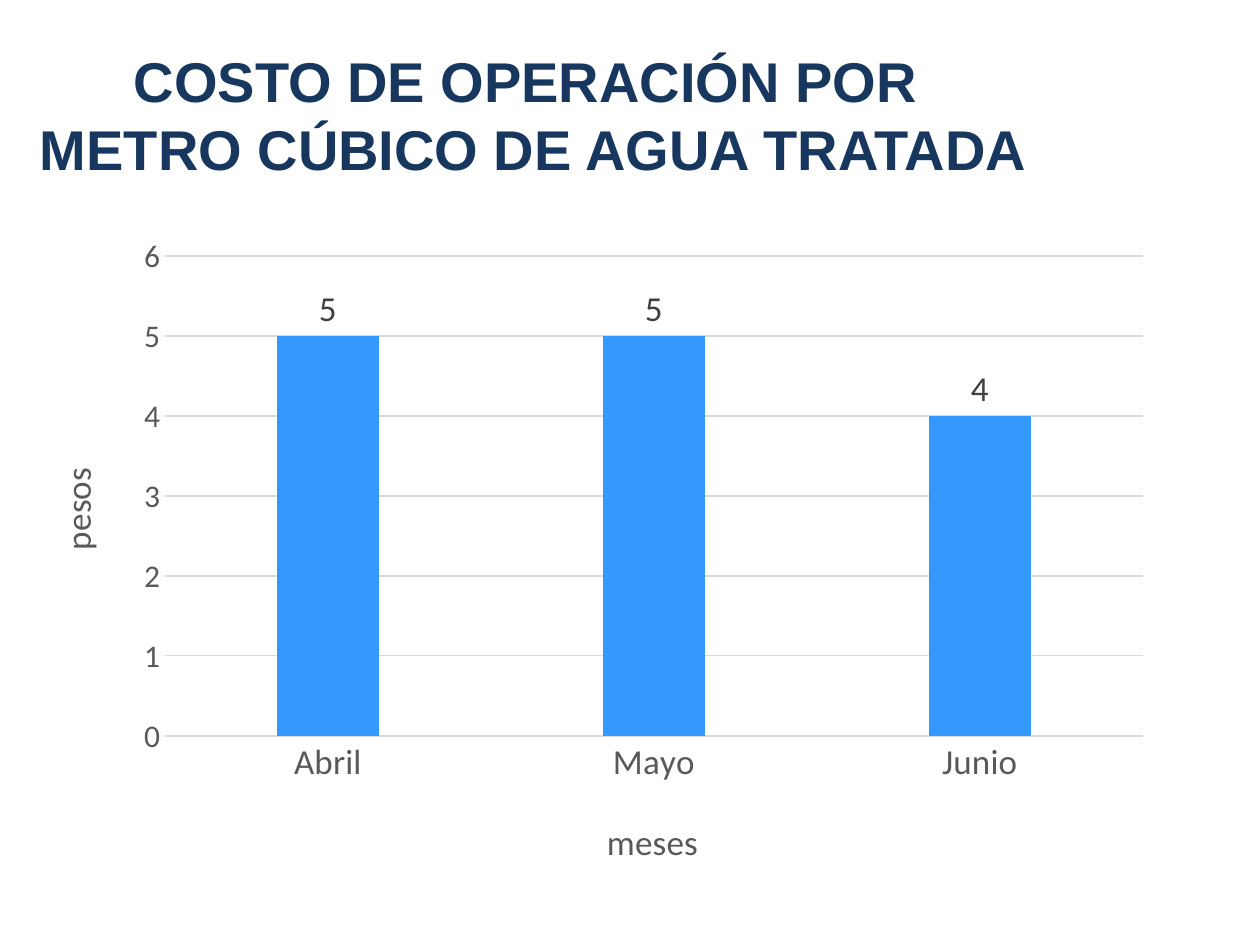
import dataclasses

import lxml.etree
import pptx
import pptx.chart.data
import pptx.dml.color
import pptx.enum.chart
import pptx.enum.text
import pptx.oxml.ns
import pptx.util

PX = 914400 // 126
QN = pptx.oxml.ns.qn


@dataclasses.dataclass(frozen=True)
class Theme:
    navy: str = "17375E"
    blue: str = "3399FF"
    gray: str = "595959"
    dark: str = "404040"
    grid: str = "D9D9D9"
    head: str = "Arial"
    body: str = "Calibri"
    big: int = 32
    mid: int = 20
    small: int = 18
    thin: float = 0.75


THEME = Theme()


def emu(box):
    return [side * PX for side in box]


def tint(text):
    return pptx.dml.color.RGBColor.from_string(text)


def style(font, name, size, color, bold=False):
    font.name = name
    font.size = pptx.util.Pt(size)
    font.color.rgb = tint(color)
    font.bold = bold


def rule(line):
    line.color.rgb = tint(THEME.grid)
    line.width = pptx.util.Pt(THEME.thin)


def layout(parent, place, after=None):
    for old in parent.findall(QN("c:layout")):
        parent.remove(old)
    node = lxml.etree.Element(QN("c:layout"))
    manual = lxml.etree.SubElement(node, QN("c:manualLayout"))
    for tag, value in place.items():
        lxml.etree.SubElement(manual, QN("c:" + tag)).set("val", str(value))
    parent.insert(0 if after is None else parent.index(after) + 1, node)


def label(axis, text, left, top):
    title = axis.axis_title
    run = title.text_frame.paragraphs[0].add_run()
    run.text = text
    style(run.font, THEME.body, THEME.mid, THEME.gray)
    node = title._element
    place = {"xMode": "edge", "yMode": "edge", "x": left, "y": top}
    layout(node, place, node.find(QN("c:tx")))


def heading(slide, box):
    frame = slide.shapes.add_textbox(*emu(box)).text_frame
    frame.word_wrap = True
    frame.vertical_anchor = pptx.enum.text.MSO_ANCHOR.MIDDLE
    para = frame.paragraphs[0]
    para.alignment = pptx.enum.text.PP_ALIGN.CENTER
    lines = ("COSTO DE OPERACIÓN POR ", "METRO CÚBICO DE AGUA TRATADA")
    for index, line in enumerate(lines):
        if index:
            para.add_line_break()
        run = para.add_run()
        run.text = line
        style(run.font, THEME.head, THEME.big, THEME.navy, True)


def costs(slide, box):
    data = pptx.chart.data.CategoryChartData()
    data.categories = ["Abril", "Mayo", "Junio"]
    data.add_series("Series 1", (5, 5, 4))
    kind = pptx.enum.chart.XL_CHART_TYPE.COLUMN_CLUSTERED
    chart = slide.shapes.add_chart(kind, *emu(box), data).chart
    chart.has_legend = False
    chart.has_title = False
    style(chart.font, THEME.body, THEME.mid, THEME.gray)

    wide, high = box[2:]
    place = {"layoutTarget": "inner", "xMode": "edge", "yMode": "edge",
             "x": round(130 / wide, 4), "y": round(32 / high, 4),
             "w": round(978 / wide, 4), "h": round(480 / high, 4)}
    layout(chart._chartSpace.chart.plotArea, place)

    months, pesos = chart.category_axis, chart.value_axis
    for axis, size in ((months, THEME.mid), (pesos, THEME.small)):
        axis.major_tick_mark = pptx.enum.chart.XL_TICK_MARK.NONE
        axis.minor_tick_mark = pptx.enum.chart.XL_TICK_MARK.NONE
        style(axis.tick_labels.font, THEME.body, size, THEME.gray)
    rule(months.format.line)
    pesos.format.line.fill.background()
    pesos.minimum_scale, pesos.maximum_scale, pesos.major_unit = 0, 6, 1
    pesos.has_major_gridlines = True
    rule(pesos.major_gridlines.format.line)
    label(months, "meses", 0.5, 0.89)
    label(pesos, "pesos", 0.01, 0.36)

    plot = chart.plots[0]
    plot.vary_by_categories = False
    plot.gap_width = 219
    plot.overlap = -27
    bars = plot.series[0]
    bars.format.fill.solid()
    bars.format.fill.fore_color.rgb = tint(THEME.blue)
    marks = bars.data_labels
    marks.show_value = True
    marks.position = pptx.enum.chart.XL_LABEL_POSITION.OUTSIDE_END
    style(marks.font, THEME.body, THEME.mid, THEME.dark)


def main():
    deck = pptx.Presentation()
    deck.slide_width, deck.slide_height = 1260 * PX, 945 * PX
    slide = deck.slides.add_slide(deck.slide_layouts[6])
    heading(slide, (5, 16, 1057, 196))
    costs(slide, (35, 224, 1131, 659))
    deck.save("out.pptx")


if __name__ == "__main__":
    main()
